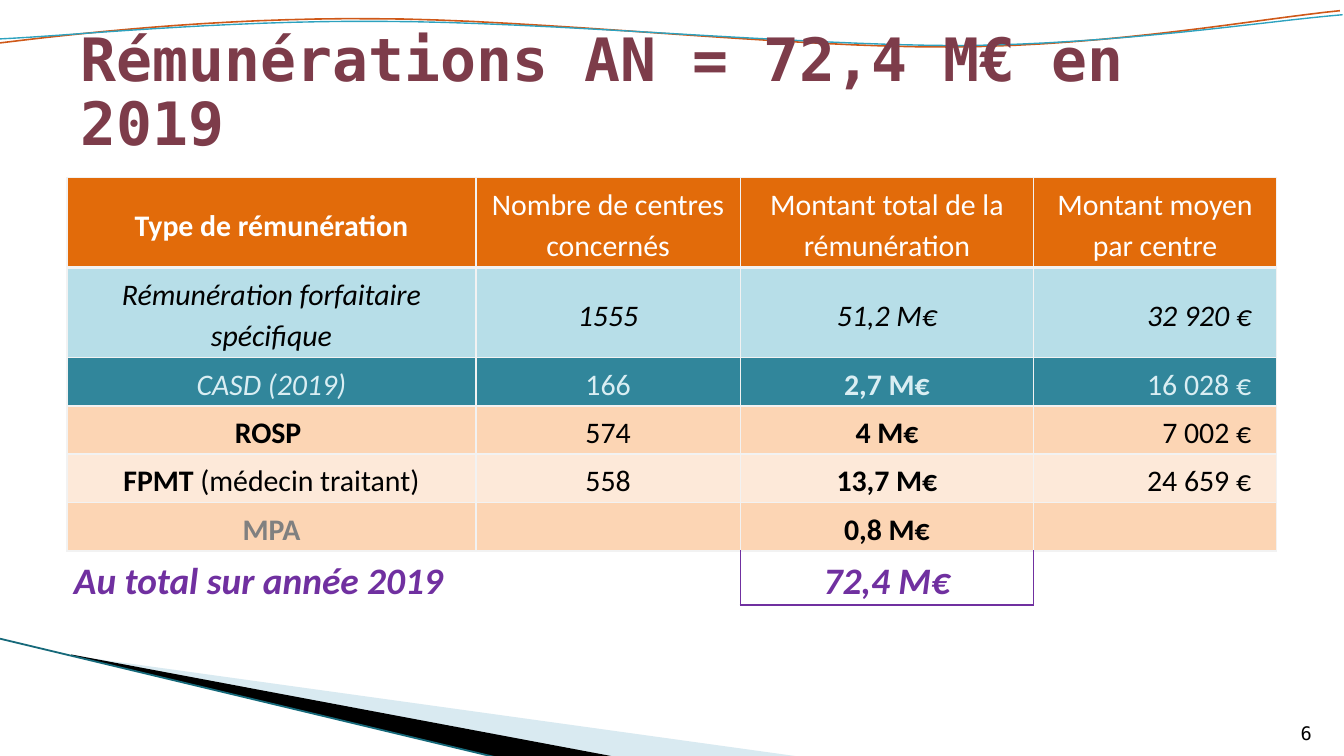
from lxml import etree
from pptx import Presentation
from pptx.dml.color import RGBColor
from pptx.enum.text import MSO_ANCHOR as Anchor, MSO_AUTO_SIZE as Auto, PP_ALIGN as Align
from pptx.enum.shapes import MSO_CONNECTOR as Conn
from pptx.oxml.ns import qn
from pptx.util import Inches, Pt

HEX = {
    "title": "7D3C4A", "head": "E26B0A", "sky": "B7DEE8", "teal": "31869B",
    "peach": "FCD5B4", "cream": "FDE9D9", "white": "FFFFFF", "black": "000000",
    "ice": "DAEEF3", "gray": "808080", "total": "7030A0", "grid": "F2F2F2",
    "wedge": "A0CBDC", "edge": "16697A", "rust": "CF5818", "aqua": "2DA2BF",
}
MONO, SANS = "DejaVu Sans Mono", "Calibri"
TITLE = "Rémunérations AN = 72,4 M€ en 2019"
PAGE = "6"
COLS = [3.04, 1.97, 2.18, 1.81]
TALL, LOW = 0.67, 0.36

ROWS = [
    (TALL, "head", "white", [[("Type de rémunération", "b")], [("Nombre de centres concernés", "")],
                             [("Montant total de la rémunération", "")], [("Montant moyen par centre", "")]]),
    (TALL, "sky", "black", [[("Rémunération forfaitaire spécifique", "i")], [("1555", "i")],
                            [("51,2 M€", "i")], [("32 920 €", "i")]]),
    (LOW, "teal", "ice", [[("CASD (2019)", "i")], [("166", "")], [("2,7 M€", "b")], [("16 028 €", "")]]),
    (LOW, "peach", "black", [[("ROSP ", "b")], [("574", "")], [("4 M€", "b")], [("7 002 €", "")]]),
    (LOW, "cream", "black", [[("FPMT ", "b"), ("(médecin traitant)", "")], [("558", "")],
                             [("13,7 M€", "b")], [("24 659 €", "")]]),
    (LOW, "peach", "black", [[("MPA", "b")], [], [("0,8 M€", "b")], []]),
    (LOW, None, "total", [[("Au total sur année 2019", "bi")], [], [("72,4 M€", "bi")], []]),
]
LAST = len(ROWS) - 1
INKS = {(5, 0): "gray"}
WEDGES = [
    ("wedge", 40, [(0.55, 4.88), (5.95, 5.63), (4.56, 5.63)]),
    ("black", 100, [(0.53, 4.87), (4.57, 5.63), (3.72, 5.64), (0.54, 4.88)]),
]
WAVES = [
    ("rust", 0.85, [(0, 0.32), (0.49, 0.26), (1.59, 0.13), (2.78, 0.14), (3.96, 0.14),
                    (5.9, 0.36), (7.1, 0.35), (8.3, 0.34), (9.37, 0.14), (9.97, 0.08)]),
    ("aqua", 0.75, [(0, 0.29), (0.48, 0.27), (1.65, 0.15), (2.84, 0.16), (4.03, 0.16),
                    (5.95, 0.34), (7.14, 0.34), (8.33, 0.33), (9.4, 0.16), (9.99, 0.11)]),
]


def color(name):
    return RGBColor.from_string(HEX[name])


def assign(item, **vals):
    for key, val in vals.items():
        setattr(item, key, val)


def write(para, text, size, face, ink, style=""):
    run = para.add_run()
    run.text = text
    assign(run.font, size=Pt(size), name=face, bold="b" in style, italic="i" in style)
    run.font.color.rgb = color(ink)


def outline(shapes, spots, close):
    pts = [(Inches(x), Inches(y)) for x, y in spots]
    pen = shapes.build_freeform(*pts[0], scale=1.0)
    pen.add_line_segments(pts[1:], close=close)
    shape = pen.convert_to_shape()
    shape.shadow.inherit = False
    return shape


def curve(ctrl, steps=16):
    spots = [ctrl[0]]
    for k in range(0, len(ctrl) - 1, 3):
        a, b, c, d = ctrl[k:k + 4]
        for n in range(1, steps + 1):
            t = n / steps
            u = 1 - t
            spots.append(tuple(u**3 * p + 3 * u * u * t * q + 3 * u * t * t * r + t**3 * s
                               for p, q, r, s in zip(a, b, c, d)))
    return spots


def border(cell, sides):
    props = cell._tc.get_or_add_tcPr()
    for side in "LRTB":
        ink, width = sides.get(side, (None, 0))
        line = etree.SubElement(props, qn("a:ln" + side), w=str(Pt(width)))
        if ink:
            fill = etree.SubElement(line, qn("a:solidFill"))
            etree.SubElement(fill, qn("a:srgbClr"), val=HEX[ink])
        else:
            etree.SubElement(line, qn("a:noFill"))


def edges(r, c):
    grid, mark = ("grid", 1), ("total", 1)
    if r == LAST:
        extra = {1: "R", 2: "LRB", 3: "L"}.get(c, "")
        return {"T": grid, **{side: mark for side in extra}}
    sides = {side: grid for side in "LRTB"}
    if r < 2:
        sides["BT"[r]] = ("grid", 1.5)
    return sides


def decorate(shapes):
    for ink, alpha, spots in WEDGES:
        shape = outline(shapes, spots, True)
        shape.fill.solid()
        shape.fill.fore_color.rgb = color(ink)
        shape.line.fill.background()
        if alpha < 100:
            tint = shape._element.spPr.find(".//" + qn("a:srgbClr"))
            etree.SubElement(tint, qn("a:alpha"), val=str(alpha * 1000))
    line = shapes.add_connector(Conn.STRAIGHT, Inches(-0.01), Inches(4.75), Inches(3.71), Inches(5.64))
    line.line.color.rgb = color("edge")
    line.line.width = Pt(0.95)
    etree.SubElement(line._element.spPr, qn("a:effectLst"))
    for ink, width, ctrl in WAVES:
        shape = outline(shapes, curve(ctrl), False)
        shape.fill.background()
        shape.line.color.rgb = color(ink)
        shape.line.width = Pt(width)


def number(shapes):
    box = shapes.add_textbox(Inches(9.46), Inches(5.29), Inches(0.4), Inches(0.3))
    assign(box.text_frame, word_wrap=True, vertical_anchor=Anchor.BOTTOM)
    para = box.text_frame.paragraphs[0]
    assign(para, alignment=Align.RIGHT, space_after=Pt(6))
    write(para, PAGE, 10, MONO, "black")


def head(shapes):
    title = shapes.title
    assign(title, left=Inches(0.5), top=Inches(0.23), width=Inches(9), height=Inches(0.94))
    assign(title.text_frame, word_wrap=True, auto_size=Auto.NONE, vertical_anchor=Anchor.MIDDLE)
    para = title.text_frame.paragraphs[0]
    assign(para, alignment=Align.LEFT, line_spacing=0.9, space_before=Pt(0))
    write(para, TITLE, 32, MONO, "title", "b")
    shapes._spTree.append(title._element)


def grid(shapes):
    high = sum(row[0] for row in ROWS)
    table = shapes.add_table(len(ROWS), len(COLS), Inches(0.5), Inches(1.32),
                             Inches(sum(COLS)), Inches(high)).table
    assign(table, first_row=False, horz_banding=False)
    for col, wide in zip(table.columns, COLS):
        col.width = Inches(wide)
    for r, (tall, fill, ink, cells) in enumerate(ROWS):
        table.rows[r].height = Inches(tall)
        for c, runs in enumerate(cells):
            cell = table.cell(r, c)
            money = c == 3 and r > 0
            assign(cell, vertical_anchor=Anchor.MIDDLE, margin_left=Inches(0.05),
                   margin_right=Inches(0.19 if money else 0.05),
                   margin_top=Inches(0.01), margin_bottom=Inches(0))
            border(cell, edges(r, c))
            if fill:
                cell.fill.solid()
                cell.fill.fore_color.rgb = color(fill)
            else:
                cell.fill.background()
            para = cell.text_frame.paragraphs[0]
            side = Align.RIGHT if money else Align.LEFT if (r, c) == (LAST, 0) else Align.CENTER
            assign(para, alignment=side, line_spacing=1.15, space_after=Pt(10))
            for text, style in runs:
                write(para, text, 20 if r == LAST else 16, SANS, INKS.get((r, c), ink), style)


def main():
    deck = Presentation()
    wide = Inches(10)
    assign(deck, slide_width=wide, slide_height=wide * 9 // 16)
    shapes = deck.slides.add_slide(deck.slide_layouts[5]).shapes
    for draw in (decorate, number, head, grid):
        draw(shapes)
    deck.save("out.pptx")


if __name__ == "__main__":
    main()
